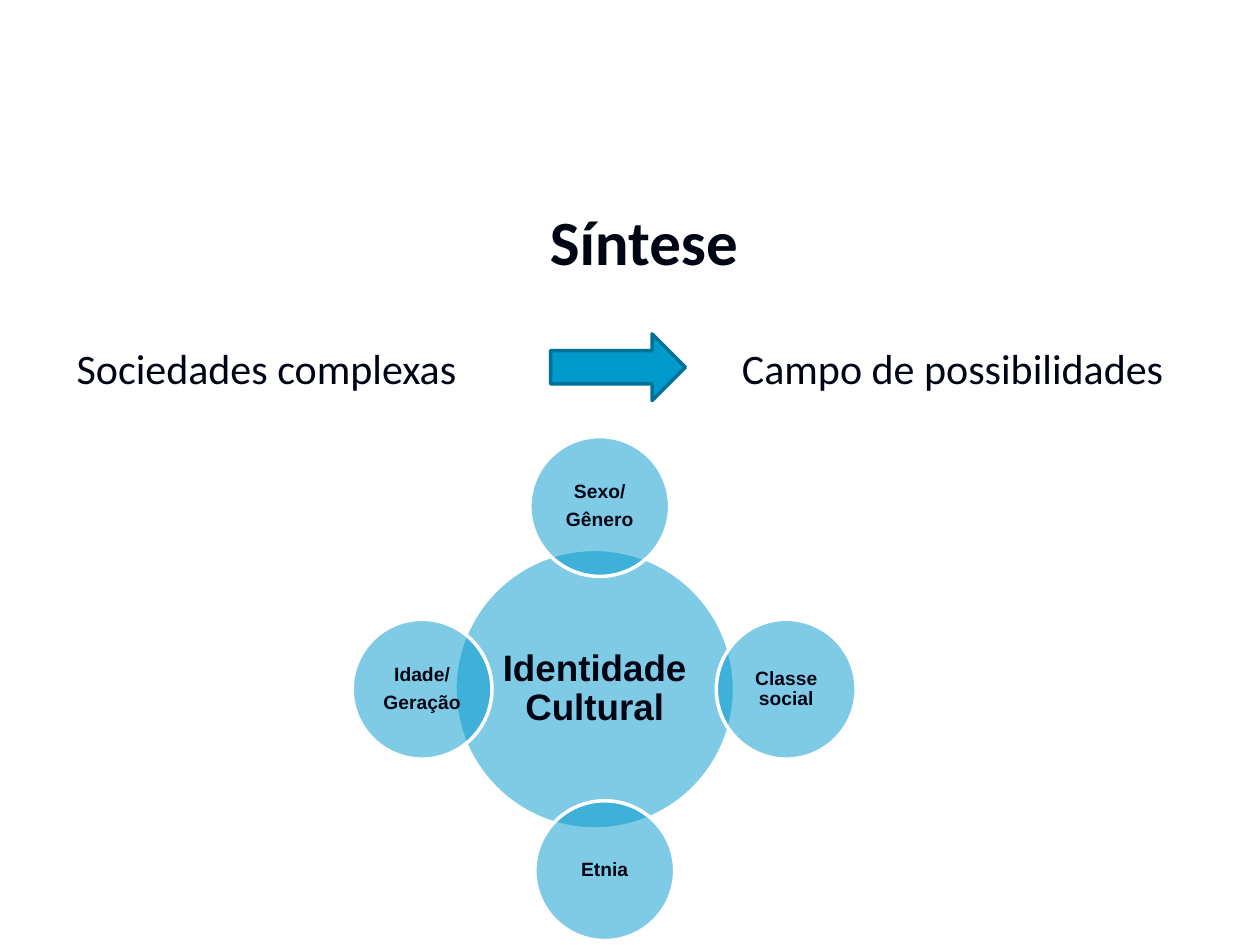
from dataclasses import dataclass

from lxml.etree import SubElement
from pptx import Presentation
from pptx.dml.color import RGBColor
from pptx.enum.shapes import MSO_SHAPE
from pptx.enum.text import MSO_ANCHOR, PP_ALIGN
from pptx.oxml.ns import qn
from pptx.util import Inches, Pt


@dataclass(frozen=True)
class Theme:
    """Colours, fonts and type sizes of the slide."""
    ink: RGBColor = RGBColor.from_string("000514")
    accent: RGBColor = RGBColor.from_string("0099CC")
    accent_edge: RGBColor = RGBColor.from_string("007197")
    paper: RGBColor = RGBColor.from_string("FFFFFF")
    heading_font: str = "Calibri"
    diagram_font: str = "Arial"
    title_size: int = 36
    statement_size: int = 24
    hub_size: int = 21
    satellite_size: int = 11
    edge_width: int = 2


class SlideBuilder:
    """Draws elements on one slide with a grid of 100 columns by 75 rows."""

    def __init__(self, deck, theme):
        """Add a title-only slide to the deck."""
        self.theme = theme
        self.column = deck.slide_width / 100
        self.row = deck.slide_height / 75
        self.slide = deck.slides.add_slide(deck.slide_layouts[5])

    def area(self, left, top, width, height):
        """Convert grid units to lengths."""
        return (round(left * self.column), round(top * self.row),
                round(width * self.column), round(height * self.row))

    def set_text(self, frame, lines, font, size, bold, align):
        """Fill a text frame with one paragraph per line."""
        frame.word_wrap = True
        frame.vertical_anchor = MSO_ANCHOR.MIDDLE
        frame.text = "\n".join(lines)
        for paragraph in frame.paragraphs:
            paragraph.alignment = align
            paragraph.font.name = font
            paragraph.font.size = Pt(size)
            paragraph.font.bold = bold
            paragraph.font.color.rgb = self.theme.ink

    def title(self, text, *place):
        """Place and format the title placeholder."""
        heading = self.slide.shapes.title
        heading.left, heading.top, heading.width, heading.height = self.area(*place)
        self.set_text(heading.text_frame, [text], self.theme.heading_font,
                      self.theme.title_size, True, PP_ALIGN.CENTER)

    def statement(self, text, *place):
        """Add a left-aligned statement."""
        box = self.slide.shapes.add_textbox(*self.area(*place))
        self.set_text(box.text_frame, [text], self.theme.heading_font,
                      self.theme.statement_size, False, PP_ALIGN.LEFT)

    def outlined(self, kind, edge, *place):
        """Add an accent-filled preset shape."""
        shape = self.slide.shapes.add_shape(kind, *self.area(*place))
        shape.shadow.inherit = False
        shape.fill.solid()
        shape.fill.fore_color.rgb = self.theme.accent
        shape.line.color.rgb = edge
        shape.line.width = Pt(self.theme.edge_width)
        return shape

    def arrow(self, *place):
        """Add a right-pointing block arrow."""
        self.outlined(MSO_SHAPE.RIGHT_ARROW, self.theme.accent_edge, *place)

    def circle(self, lines, centre_x, centre_y, diameter, size, inset):
        """Add a half-transparent labelled circle around a centre."""
        disc = self.outlined(MSO_SHAPE.OVAL, self.theme.paper,
                             centre_x - diameter / 2, centre_y - diameter / 2,
                             diameter, diameter)
        colour = disc.element.spPr.find(qn("a:solidFill"))[0]
        SubElement(colour, qn("a:alpha"), val="50000")
        frame = disc.text_frame
        frame.margin_left = frame.margin_right = Inches(inset)
        frame.margin_top = frame.margin_bottom = Inches(inset)
        self.set_text(frame, lines, self.theme.diagram_font, size, True, PP_ALIGN.CENTER)
        for paragraph in frame.paragraphs:
            paragraph.line_spacing = 0.9
            paragraph.space_after = Pt(round(size * 0.35, 2))


def main():
    """Build and save the synthesis slide."""
    deck = Presentation()
    deck.slide_width, deck.slide_height = Inches(10), Inches(7.5)
    theme = Theme()
    page = SlideBuilder(deck, theme)

    page.title("Síntese", 6.1, 14.7, 90, 8.7)
    page.statement("Sociedades complexas", 5.1, 26.5, 36, 5.3)
    page.statement("Campo de possibilidades", 57.9, 26.5, 38, 5.3)
    page.arrow(43.7, 26.5, 10.7, 5.3)

    page.circle(["Identidade Cultural"], 47.2, 54.7, 22.2, theme.hub_size, 0.03)
    satellites = [
        (["Sexo/", "Gênero"], 47.6, 40.2),
        (["Classe social"], 62.4, 54.7),
        (["Etnia"], 48, 69.1),
        (["Idade/", "Geração"], 33.5, 54.7),
    ]
    for label, centre_x, centre_y in satellites:
        page.circle(label, centre_x, centre_y, 11.1, theme.satellite_size, 0.02)

    deck.save("out.pptx")


if __name__ == "__main__":
    main()
